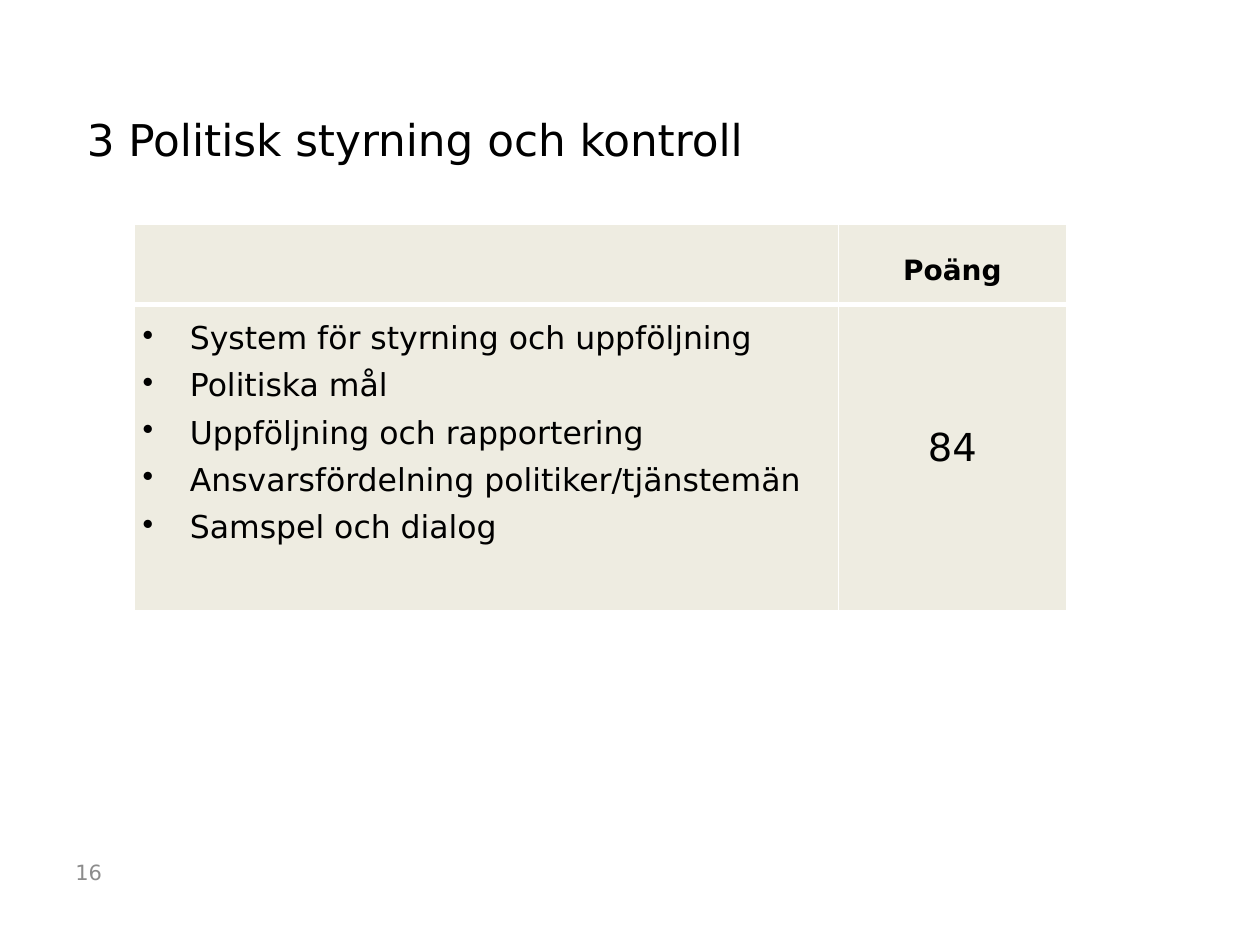
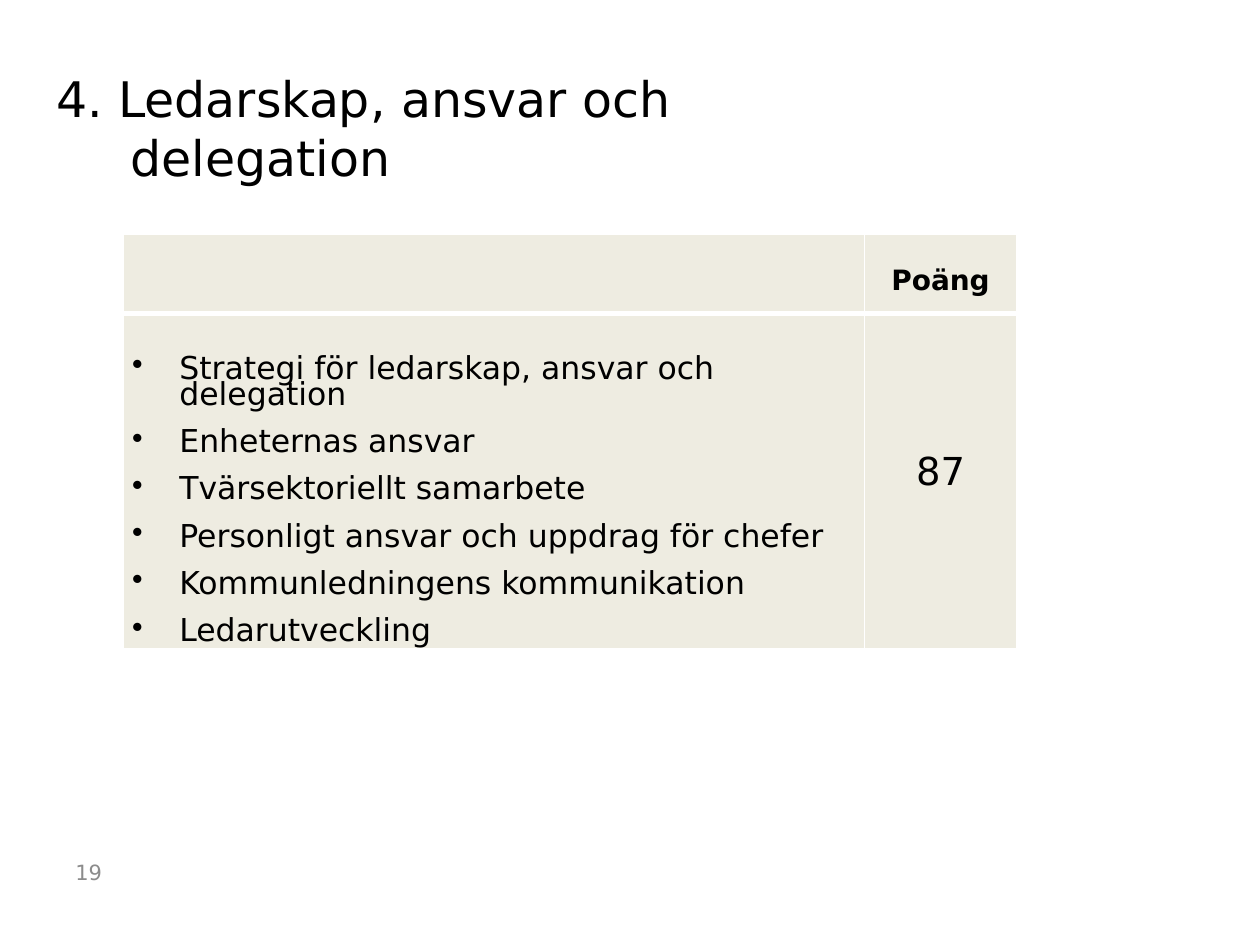
from dataclasses import dataclass

from lxml import etree
from pptx import Presentation
from pptx.dml.color import RGBColor
from pptx.enum.text import MSO_ANCHOR, PP_ALIGN
from pptx.oxml.ns import qn
from pptx.util import Pt

LEFT, CENTER = PP_ALIGN.LEFT, PP_ALIGN.CENTER
TOP, MIDDLE, BOTTOM = MSO_ANCHOR.TOP, MSO_ANCHOR.MIDDLE, MSO_ANCHOR.BOTTOM

HEAD = "Poäng"
PAGES = [
    {
        "title": "3 Politisk styrning och kontroll",
        "size": 25, "hang": 35, "box": (42.5, 20, 480, 78),
        "number": "16", "score": "84",
        "items": [
            "System för styrning och uppföljning",
            "Politiska mål",
            "Uppföljning och rapportering",
            "Ansvarsfördelning politiker/tjänstemän",
            "Samspel och dialog",
        ],
        "at": (76.5, 128), "cols": (402.5, 130.5), "rows": (46, 175), "pad": 15,
    },
    {
        "title": "4. Ledarskap, ansvar och delegation",
        "size": 28, "hang": 42.5, "box": (25, 26, 486, 84),
        "number": "19", "score": "87",
        "items": [
            "Strategi för ledarskap, ansvar och delegation",
            "Enheternas ansvar",
            "Tvärsektoriellt samarbete",
            "Personligt ansvar och uppdrag för chefer",
            "Kommunledningens kommunikation",
            "Ledarutveckling",
        ],
        "at": (70.5, 134), "cols": (423.5, 87), "rows": (45, 192), "pad": 27,
    },
]


@dataclass(frozen=True)
class Theme:
    font: str = "DejaVu Sans"
    ink: str = "000000"
    gray: str = "8C8C8C"
    sand: str = "EEECE1"
    rule: str = "FFFFFF"
    small: int = 12
    head: int = 16
    body: int = 18
    score: int = 22
    line: int = 15
    thin: int = 1
    thick: int = 3
    inset: int = 5
    indent: int = 27


THEME = Theme()


def write(para, text, size, color=THEME.ink, bold=False, align=LEFT):
    para.alignment = align
    run = para.add_run()
    run.text = text
    font = run.font
    font.name, font.size, font.bold = THEME.font, Pt(size), bold
    font.color.rgb = RGBColor.from_string(color)


def hang(para, width):
    props = para._p.get_or_add_pPr()
    props.set("marL", str(Pt(width)))
    props.set("indent", str(-Pt(width)))
    return props


def add_box(slide, box, anchor):
    frame = slide.shapes.add_textbox(*map(Pt, box)).text_frame
    frame.word_wrap = True
    frame.vertical_anchor = anchor
    return frame.paragraphs[0]


def style(cell, row):
    props = cell._tc.get_or_add_tcPr()
    sides = {"L": THEME.thin, "R": THEME.thin,
             "T": THEME.thick if row else THEME.thin,
             "B": THEME.thin if row else THEME.thick}
    for side, width in sides.items():
        edge = etree.SubElement(props, qn("a:ln" + side), w=str(Pt(width)))
        fill = etree.SubElement(edge, qn("a:solidFill"))
        etree.SubElement(fill, qn("a:srgbClr"), val=THEME.rule)
    cell.fill.solid()
    cell.fill.fore_color.rgb = RGBColor.from_string(THEME.sand)
    cell.margin_left = cell.margin_right = Pt(THEME.inset)
    cell.margin_top = cell.margin_bottom = 0


def fill_cell(cell, lines, size, after, pad=0, anchor=TOP,
              align=LEFT, bold=False, dots=False):
    cell.margin_top = Pt(pad)
    cell.vertical_anchor = anchor
    frame = cell.text_frame
    for i, text in enumerate(lines):
        para = frame.add_paragraph() if i else frame.paragraphs[0]
        if dots:
            props = hang(para, THEME.indent)
            etree.SubElement(props, qn("a:buChar"), char="•")
        para.line_spacing = Pt(THEME.line)
        para.space_after = Pt(after)
        write(para, text, size, bold=bold, align=align)


def add_grid(slide, page):
    cols, rows = page["cols"], page["rows"]
    size = (sum(cols), sum(rows))
    grid = slide.shapes.add_table(
        len(rows), len(cols), *map(Pt, page["at"] + size)).table
    grid.first_row = grid.horz_banding = False
    for col, width in zip(grid.columns, cols):
        col.width = Pt(width)
    for i, (row, height) in enumerate(zip(grid.rows, rows)):
        row.height = Pt(height)
        for cell in row.cells:
            style(cell, i)
    fill_cell(grid.cell(0, 1), [HEAD], THEME.head, 6, pad=21,
              align=CENTER, bold=True)
    fill_cell(grid.cell(1, 0), page["items"], THEME.body, 12,
              pad=page["pad"], dots=True)
    fill_cell(grid.cell(1, 1), [page["score"]], THEME.score, 6,
              anchor=MIDDLE, align=CENTER)


def main():
    deck = Presentation()
    deck.slide_width, deck.slide_height = Pt(720), Pt(540)
    for page in PAGES:
        slide = deck.slides.add_slide(deck.slide_layouts[6])
        write(add_box(slide, (36, 484, 110, 29), MIDDLE),
              page["number"], THEME.small, THEME.gray)
        title = add_box(slide, page["box"], BOTTOM)
        hang(title, page["hang"])
        write(title, page["title"], page["size"])
        add_grid(slide, page)
    deck.save("out.pptx")


if __name__ == "__main__":
    main()
